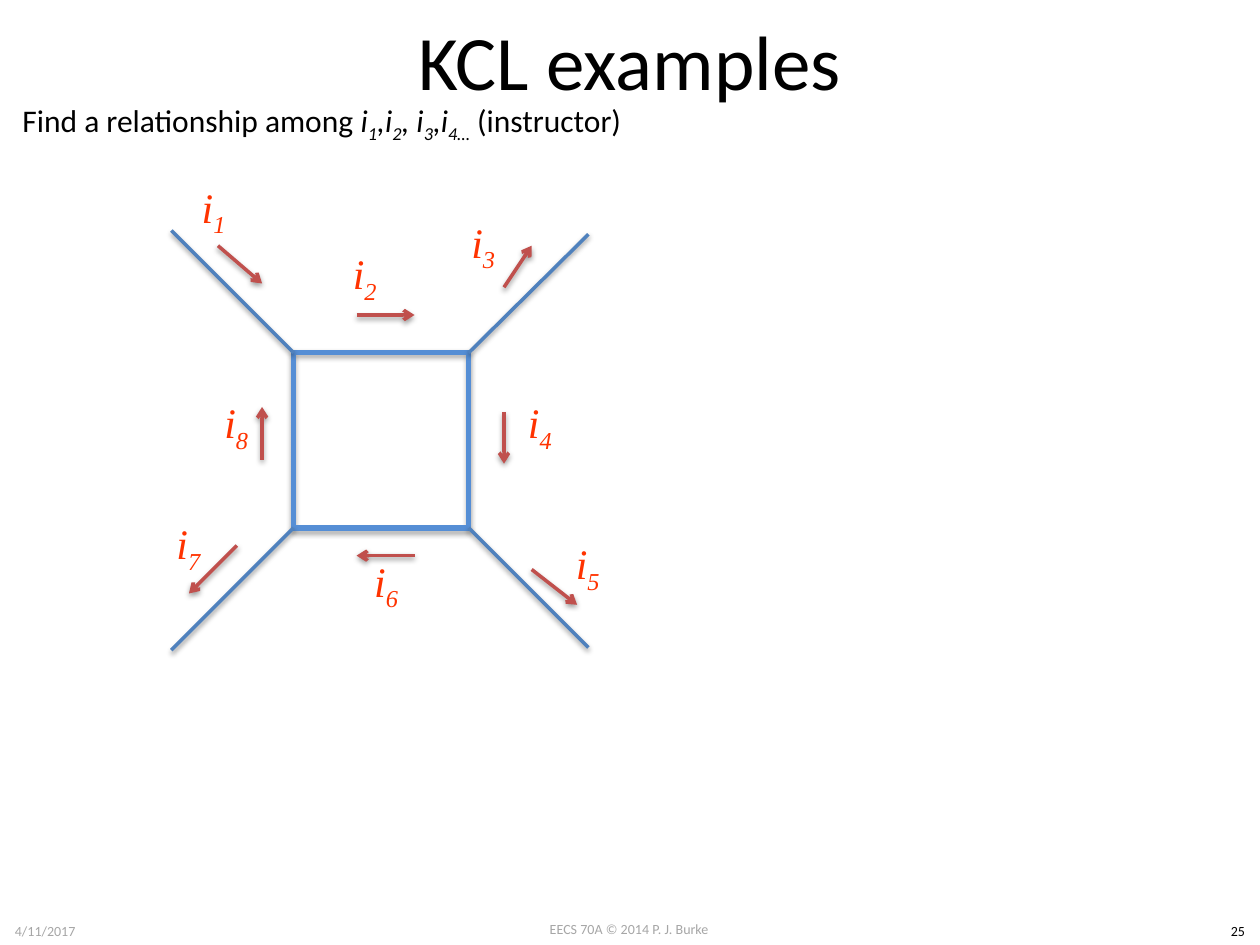
from lxml import etree
from pptx import Presentation
from pptx.dml.color import RGBColor
from pptx.enum.shapes import MSO_CONNECTOR, MSO_SHAPE
from pptx.enum.text import MSO_ANCHOR, PP_ALIGN
from pptx.oxml.ns import qn
from pptx.util import Inches, Pt

BLACK = RGBColor(0x00, 0x00, 0x00)
GRAY = RGBColor(0xA6, 0xA6, 0xA6)
ORANGE = RGBColor(0xFF, 0x33, 0x00)
RED = RGBColor(0xC0, 0x50, 0x4D)
WIRE_BLUE = RGBColor(0x4F, 0x81, 0xBD)
LOOP_BLUE = RGBColor(0x55, 0x8E, 0xD5)

LEFT, CENTER = PP_ALIGN.LEFT, PP_ALIGN.CENTER
TOP, MIDDLE = MSO_ANCHOR.TOP, MSO_ANCHOR.MIDDLE
STRAIGHT = MSO_CONNECTOR.STRAIGHT
RECTANGLE = MSO_SHAPE.RECTANGLE

PLAIN, ITALIC, SUBSCRIPT = "plain", "italic", "subscript"

# Loop diagram, in inches from the corner of its box
LOOP_START, LOOP_SIDE = (1.33, 1.8), 1.39
LABEL_SIZE = (0.77, 0.61)
WIRE_ENDS = [(0.36, 0.83), (3.67, 0.86), (0.36, 4.16), (3.67, 4.14)]
# Each current: label corner, arrow start, arrow end
CURRENTS = [
    ((0.31, 0.36), (0.73, 0.95), (1.08, 1.25)),
    ((1.51, 0.89), (1.83, 1.5), (2.29, 1.5)),
    ((2.45, 0.64), (3, 1.28), (3.22, 0.95)),
    ((2.9, 2.07), (3, 2.27), (3, 2.68)),
    ((3.28, 3.19), (3.22, 3.52), (3.58, 3.8)),
    ((1.68, 3.33), (2.29, 3.41), (1.83, 3.41)),
    ((0.11, 3.03), (0.88, 3.33), (0.5, 3.71)),
    ((0.49, 2.07), (1.08, 2.65), (1.08, 2.23)),
]


def add_text(slide, box, pieces, size, color, font="Calibri",
             align=LEFT, anchor=TOP, wrap=True):
    """Place one line of text made of (text, style) pieces."""
    shape = slide.shapes.add_textbox(*map(Inches, box))
    text_frame = shape.text_frame
    text_frame.word_wrap = wrap
    text_frame.vertical_anchor = anchor
    paragraph = text_frame.paragraphs[0]
    paragraph.alignment = align
    for text, style in pieces:
        run = paragraph.add_run()
        run.text = text
        run.font.name = font
        run.font.size = Pt(size)
        run.font.color.rgb = color
        run.font.italic = style != PLAIN
        if style == SUBSCRIPT:
            run.font._element.set("baseline", "-25000")


def add_shadow(shape, distance, opacity):
    """Give a shape or connector a soft shadow straight below it."""
    effects = etree.SubElement(shape._element.spPr, qn("a:effectLst"))
    shadow = etree.SubElement(
        effects, qn("a:outerShdw"), blurRad=str(Pt(3.1)),
        dist=str(Pt(distance)), dir="5400000", rotWithShape="0")
    color = etree.SubElement(shadow, qn("a:srgbClr"), val=str(BLACK))
    etree.SubElement(color, qn("a:alpha"), val=str(opacity * 1000))


def add_line(slide, start, end, color, arrow=False):
    connector = slide.shapes.add_connector(
        STRAIGHT, *map(Inches, (*start, *end)))
    connector.line.color.rgb = color
    connector.line.width = Pt(2)
    if arrow:
        etree.SubElement(connector.line._get_or_add_ln(),
                         qn("a:tailEnd"), type="arrow")
    add_shadow(connector, 1.6, 38)


def add_heading(slide, left, top, width):
    # Title
    add_text(slide, (left + 0.5, top, width - 1, 0.95),
             [("KCL examples", PLAIN)], 44, BLACK,
             align=CENTER, anchor=MIDDLE)
    # Task
    add_text(slide, (left + 0.08, top + 0.75, 5.12, 0.4), [
        ("Find a relationship among ", PLAIN),
        ("i", ITALIC), ("1", SUBSCRIPT),
        (",i", ITALIC), ("2", SUBSCRIPT),
        (", i", ITALIC), ("3", SUBSCRIPT),
        (",i", ITALIC), ("4…", SUBSCRIPT),
        (" (instructor)", PLAIN),
    ], 18, BLACK, wrap=False)


def add_loop_diagram(slide, left, top):
    def place(point):
        return left + point[0], top + point[1]

    # Square loop
    loop_left, loop_top = place(LOOP_START)
    loop = slide.shapes.add_shape(
        RECTANGLE, *map(Inches, (loop_left, loop_top, LOOP_SIDE, LOOP_SIDE)))
    loop.fill.background()
    loop.line.color.rgb = LOOP_BLUE
    loop.line.width = Pt(3)
    add_shadow(loop, 1.8, 35)

    # Wires leaving the corners, row by row
    corners = [(loop_left + column * LOOP_SIDE, loop_top + row * LOOP_SIDE)
               for row in range(2) for column in range(2)]
    for corner, end in zip(corners, WIRE_ENDS):
        add_line(slide, corner, place(end), WIRE_BLUE)

    # Currents
    for number, (label, start, end) in enumerate(CURRENTS, 1):
        add_line(slide, place(start), place(end), RED, arrow=True)
        add_text(slide, (*place(label), *LABEL_SIZE),
                 [("i", ITALIC), (str(number), SUBSCRIPT)], 24, ORANGE,
                 font="Times New Roman", align=CENTER, anchor=MIDDLE)


def add_footer(slide, left, top, width):
    add_text(slide, (left + 0.02, top + 0.01, 2.07, 0.23),
             [("4/11/2017", PLAIN)], 8, GRAY, anchor=MIDDLE)
    add_text(slide, (left + 3.83, top, 2.33, 0.24),
             [("EECS 70A © 2014 P. J. Burke", PLAIN)], 8, GRAY, align=CENTER)
    add_text(slide, (left + width - 0.35, top + 0.01, 0.35, 0.24),
             [("25", PLAIN)], 8, BLACK, align=CENTER)


def main():
    presentation = Presentation()
    presentation.slide_width = Inches(10)
    presentation.slide_height = Inches(7.5)
    slide = presentation.slides.add_slide(presentation.slide_layouts[6])
    add_heading(slide, 0, 0, 10)
    add_loop_diagram(slide, 1, 1)
    add_footer(slide, 0, 7.26, 10)
    presentation.save("out.pptx")


if __name__ == "__main__":
    main()
